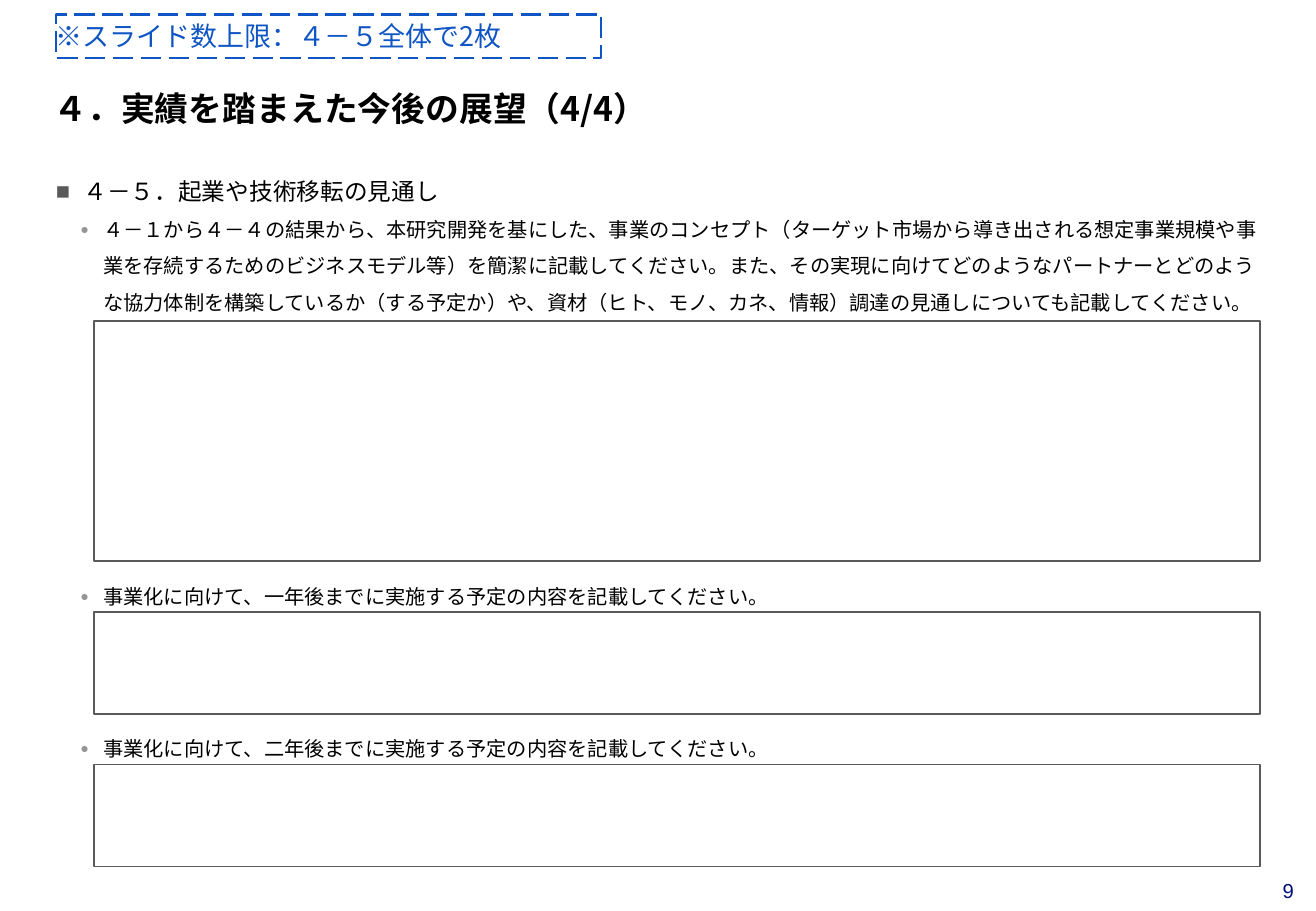
import pptx
import pptx.dml.color
import pptx.enum.dml
import pptx.enum.shapes
import pptx.enum.text
import pptx.oxml.ns
import pptx.util
from lxml import etree

Cm = pptx.util.Cm
Pt = pptx.util.Pt
qn = pptx.oxml.ns.qn
ANCHOR = pptx.enum.text.MSO_ANCHOR
RECTANGLE = pptx.enum.shapes.MSO_SHAPE.RECTANGLE

JAPANESE = "Noto Sans CJK JP"
BLACK, GRAY, PALE, BLUE, NAVY = "000000", "5A5A5A", "969696", "0F55C3", "000F78"
GAP = 0.22

HEADING = "４－５．起業や技術移転の見通し"
CONCEPT = (
    "４－１から４－４の結果から、本研究開発を基にした、事業のコンセプト"
    "（ターゲット市場から導き出される想定事業規模や事業を存続するための"
    "ビジネスモデル等）を簡潔に記載してください。また、その実現に向けて"
    "どのようなパートナーとどのような協力体制を構築しているか（する予定か）や、"
    "資材（ヒト、モノ、カネ、情報）調達の見通しについても記載してください。"
)
YEAR_PLAN = "事業化に向けて、{}年後までに実施する予定の内容を記載してください。"

BULLETS = [
    {"char": "■", "color": GRAY, "percent": 100, "indent": 0.58, "hang": 0.58,
     "size": 14, "spacing": 1.2},
    {"char": "●", "color": PALE, "percent": 70, "indent": 0.99, "hang": 0.48,
     "size": 12, "spacing": 1.5},
]
SECTIONS = [
    ([(HEADING, 0), (CONCEPT, 1)], 2.91, 5.03),
    ([(YEAR_PLAN.format("一"), 1)], 0.62, 2.13),
    ([(YEAR_PLAN.format("二"), 1)], 0.62, 2.13),
]


def rgb(value):
    return pptx.dml.color.RGBColor.from_string(value)


def format_text(para, size, color, font=JAPANESE, bold=False):
    for span in para.runs:
        span.font.size = Pt(size)
        span.font.name = font
        span.font.bold = bold
        span.font.color.rgb = rgb(color)
        properties = span.font._element
        etree.SubElement(properties, qn("a:ea")).set("typeface", font)


def prepare_frame(frame, margins=(0, 0, 0, 0), anchor=ANCHOR.TOP):
    frame.word_wrap = True
    frame.auto_size = pptx.enum.text.MSO_AUTO_SIZE.NONE
    frame.vertical_anchor = anchor
    frame.margin_left, frame.margin_top, frame.margin_right, frame.margin_bottom = map(Cm, margins)


def add_bullet(para, level):
    style = BULLETS[level]
    para.level = level
    para.line_spacing = style["spacing"]
    properties = para._p.get_or_add_pPr()
    properties.set("marL", str(Cm(style["indent"])))
    properties.set("indent", str(-Cm(style["hang"])))
    color = etree.SubElement(properties, qn("a:buClr"))
    etree.SubElement(color, qn("a:srgbClr")).set("val", style["color"])
    etree.SubElement(properties, qn("a:buSzPct")).set("val", str(style["percent"] * 1000))
    etree.SubElement(properties, qn("a:buFont")).set("typeface", "Arial")
    etree.SubElement(properties, qn("a:buChar")).set("char", style["char"])
    format_text(para, style["size"], BLACK)


def add_rectangle(page, left, top, width, height, color, weight):
    box = page.shapes.add_shape(RECTANGLE, Cm(left), Cm(top), Cm(width), Cm(height))
    box.shadow.inherit = False
    box.line.color.rgb = rgb(color)
    box.line.width = Pt(weight)
    return box


def set_title(page, left, top, width, height):
    title = page.shapes.title
    title.left, title.top, title.width, title.height = map(Cm, (left, top, width, height))
    frame = title.text_frame
    frame.text = "４．実績を踏まえた今後の展望（4/4）"
    prepare_frame(frame, anchor=ANCHOR.MIDDLE)
    frame.paragraphs[0].alignment = pptx.enum.text.PP_ALIGN.LEFT
    format_text(frame.paragraphs[0], 20, BLACK, bold=True)


def add_limit_note(page, left, top, width, height):
    note = add_rectangle(page, left, top, width, height, BLUE, 1.5)
    note.fill.background()
    note.line.dash_style = pptx.enum.dml.MSO_LINE.LONG_DASH
    frame = note.text_frame
    frame.text = "※スライド数上限：４－５全体で2枚"
    prepare_frame(frame, (0, 0.1, 0, 0.13))
    frame.paragraphs[0].alignment = pptx.enum.text.PP_ALIGN.LEFT
    format_text(frame.paragraphs[0], 16, BLUE)


def add_section(page, left, top, width, prompts, prompt_height, answer_height):
    box = page.shapes.add_textbox(Cm(left), Cm(top), Cm(width), Cm(prompt_height))
    frame = box.text_frame
    frame.text = "\n".join(text for text, level in prompts)
    prepare_frame(frame)
    for para, (text, level) in zip(frame.paragraphs, prompts):
        add_bullet(para, level)
    answer_top = top + prompt_height + GAP
    answer = add_rectangle(page, left + 0.79, answer_top, width - 0.79, answer_height, GRAY, 1)
    answer.fill.solid()
    answer.fill.fore_color.rgb = rgb("FFFFFF")
    return answer_top + answer_height + GAP


def add_page_number(page, left, top, width, height):
    box = page.shapes.add_textbox(Cm(left), Cm(top), Cm(width), Cm(height))
    frame = box.text_frame
    frame.text = "9"
    prepare_frame(frame, (0, 0, 0.46, 0), ANCHOR.MIDDLE)
    frame.paragraphs[0].alignment = pptx.enum.text.PP_ALIGN.RIGHT
    format_text(frame.paragraphs[0], 12, NAVY, "Arial")


def main():
    deck = pptx.Presentation()
    deck.slide_width, deck.slide_height = Cm(27.51), Cm(19.05)
    page = deck.slides.add_slide(deck.slide_layouts[5])
    set_title(page, 1.12, 1.83, 25.17, 0.86)
    top = 3.58
    for prompts, prompt_height, answer_height in SECTIONS:
        top = add_section(page, 1.17, top, 25.17, prompts, prompt_height, answer_height)
    add_limit_note(page, 1.17, 0.3, 11.4, 0.91)
    add_page_number(page, 26.16, 18.39, 1.35, 0.48)
    deck.save("out.pptx")


if __name__ == "__main__":
    main()
